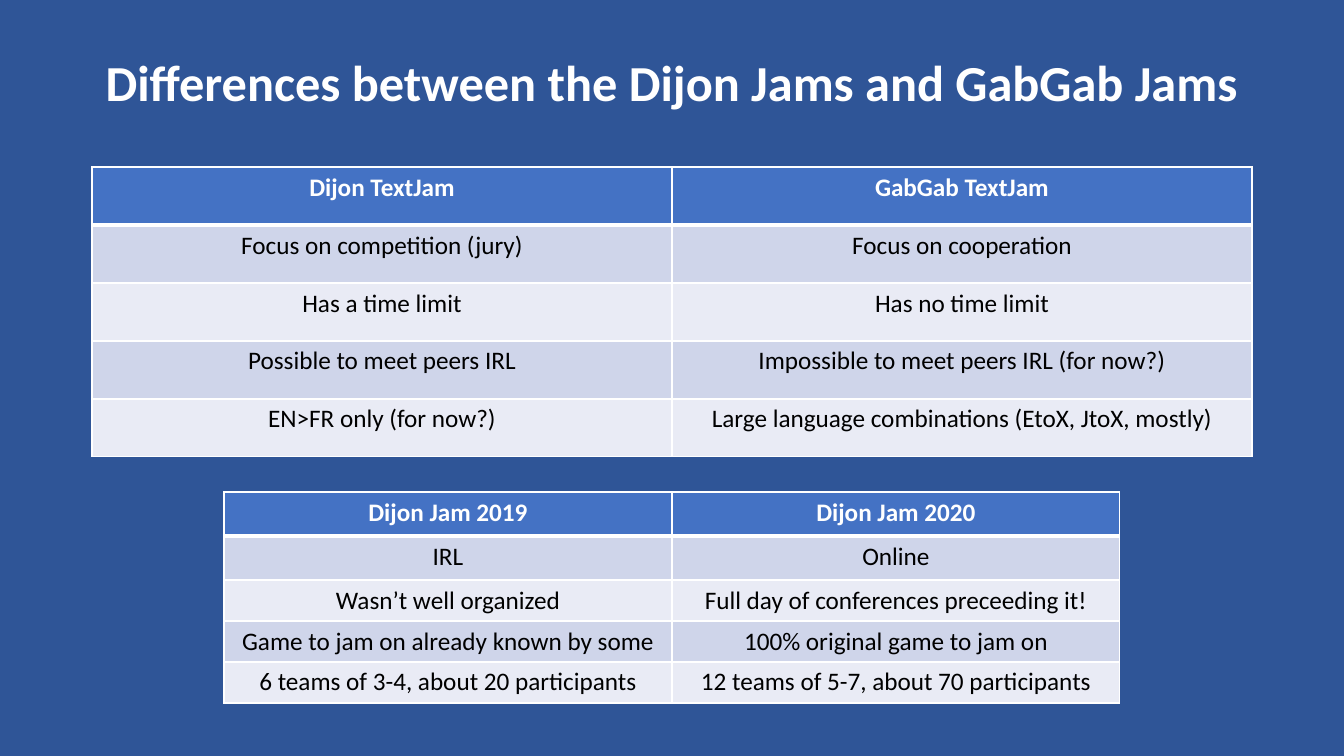
"""Builds a slide that compares localization jams in two tables."""
from dataclasses import dataclass

from lxml.etree import SubElement
from pptx import Presentation
from pptx.dml.color import RGBColor
from pptx.enum.text import MSO_ANCHOR, PP_ALIGN
from pptx.oxml.ns import qn
from pptx.slide import Slide
from pptx.table import _Cell
from pptx.text.text import _Paragraph
from pptx.util import Emu, Pt

SLIDE_WIDTH, SLIDE_HEIGHT = 1344, 756
EMU_PER_PX = 12192000 / SLIDE_WIDTH
FONT_NAME = "Calibri"
BACKGROUND = RGBColor(0x2F, 0x55, 0x97)
HEADER_FILL = RGBColor(0x44, 0x72, 0xC4)
BAND_FILLS = (RGBColor(0xCF, 0xD5, 0xEA), RGBColor(0xE9, 0xEB, 0xF5))
WHITE = RGBColor(0xFF, 0xFF, 0xFF)
BLACK = RGBColor(0x00, 0x00, 0x00)
THIN, THICK = Pt(1), Pt(3)


@dataclass(frozen=True)
class ComparisonTable:
    top: int
    column_width: int
    row_heights: tuple[int, ...]
    rows: tuple[tuple[str, str], ...]


TABLES = (
    ComparisonTable(167, 580, (58,) * 5, (
        ("Dijon TextJam", "GabGab TextJam"),
        ("Focus on competition (jury)", "Focus on cooperation"),
        ("Has a time limit", "Has no time limit"),
        ("Possible to meet peers IRL", "Impossible to meet peers IRL (for now?)"),
        ("EN>FR only (for now?)", "Large language combinations (EtoX, JtoX, mostly)"),
    )),
    ComparisonTable(492, 448, (44, 44, 41, 41, 41), (
        ("Dijon Jam 2019", "Dijon Jam 2020"),
        ("IRL", "Online"),
        ("Wasn’t well organized", "Full day of conferences preceeding it!"),
        ("Game to jam on already known by some", "100% original game to jam on"),
        ("6 teams of 3-4, about 20 participants", "12 teams of 5-7, about 70 participants"),
    )),
)


def px(length: int) -> Emu:
    return Emu(round(length * EMU_PER_PX))


def format_paragraph(paragraph: _Paragraph, size: int, color: RGBColor, bold: bool) -> None:
    paragraph.alignment = PP_ALIGN.CENTER
    paragraph.font.name = FONT_NAME
    paragraph.font.size = Pt(size)
    paragraph.font.bold = bold
    paragraph.font.color.rgb = color


def add_borders(cell: _Cell, top: Emu, bottom: Emu) -> None:
    properties = cell._tc.get_or_add_tcPr()
    for side, width in (("L", THIN), ("R", THIN), ("T", top), ("B", bottom)):
        line = SubElement(properties, qn(f"a:ln{side}"), w=str(width))
        fill = SubElement(line, qn("a:solidFill"))
        SubElement(fill, qn("a:srgbClr"), val=str(WHITE))


def add_title(slide: Slide, text: str) -> None:
    title = slide.shapes.title
    title.left, title.top, title.width, title.height = px(92), px(12), px(1160), px(146)
    title.text_frame.text = text
    title.text_frame.vertical_anchor = MSO_ANCHOR.MIDDLE
    paragraph = title.text_frame.paragraphs[0]
    paragraph.line_spacing = 0.9
    format_paragraph(paragraph, 36, WHITE, True)


def add_comparison(slide: Slide, comparison: ComparisonTable) -> None:
    width = 2 * comparison.column_width
    table = slide.shapes.add_table(
        len(comparison.rows), 2, px((SLIDE_WIDTH - width) // 2), px(comparison.top),
        px(width), px(sum(comparison.row_heights))).table
    for column in table.columns:
        column.width = px(comparison.column_width)
    for row_index, texts in enumerate(comparison.rows):
        table.rows[row_index].height = px(comparison.row_heights[row_index])
        is_header = row_index == 0
        for column_index, text in enumerate(texts):
            cell = table.cell(row_index, column_index)
            cell.text = text
            format_paragraph(cell.text_frame.paragraphs[0], 18,
                             WHITE if is_header else BLACK, is_header)
            add_borders(cell, THICK if row_index == 1 else THIN,
                        THICK if is_header else THIN)
            cell.fill.solid()
            cell.fill.fore_color.rgb = HEADER_FILL if is_header else BAND_FILLS[(row_index - 1) % 2]


def main() -> None:
    presentation = Presentation()
    presentation.slide_width, presentation.slide_height = px(SLIDE_WIDTH), px(SLIDE_HEIGHT)
    slide = presentation.slides.add_slide(presentation.slide_layouts.get_by_name("Title Only"))
    slide.background.fill.solid()
    slide.background.fill.fore_color.rgb = BACKGROUND
    add_title(slide, "Differences between the Dijon Jams and GabGab Jams")
    for comparison in TABLES:
        add_comparison(slide, comparison)
    presentation.save("out.pptx")


if __name__ == "__main__":
    main()
